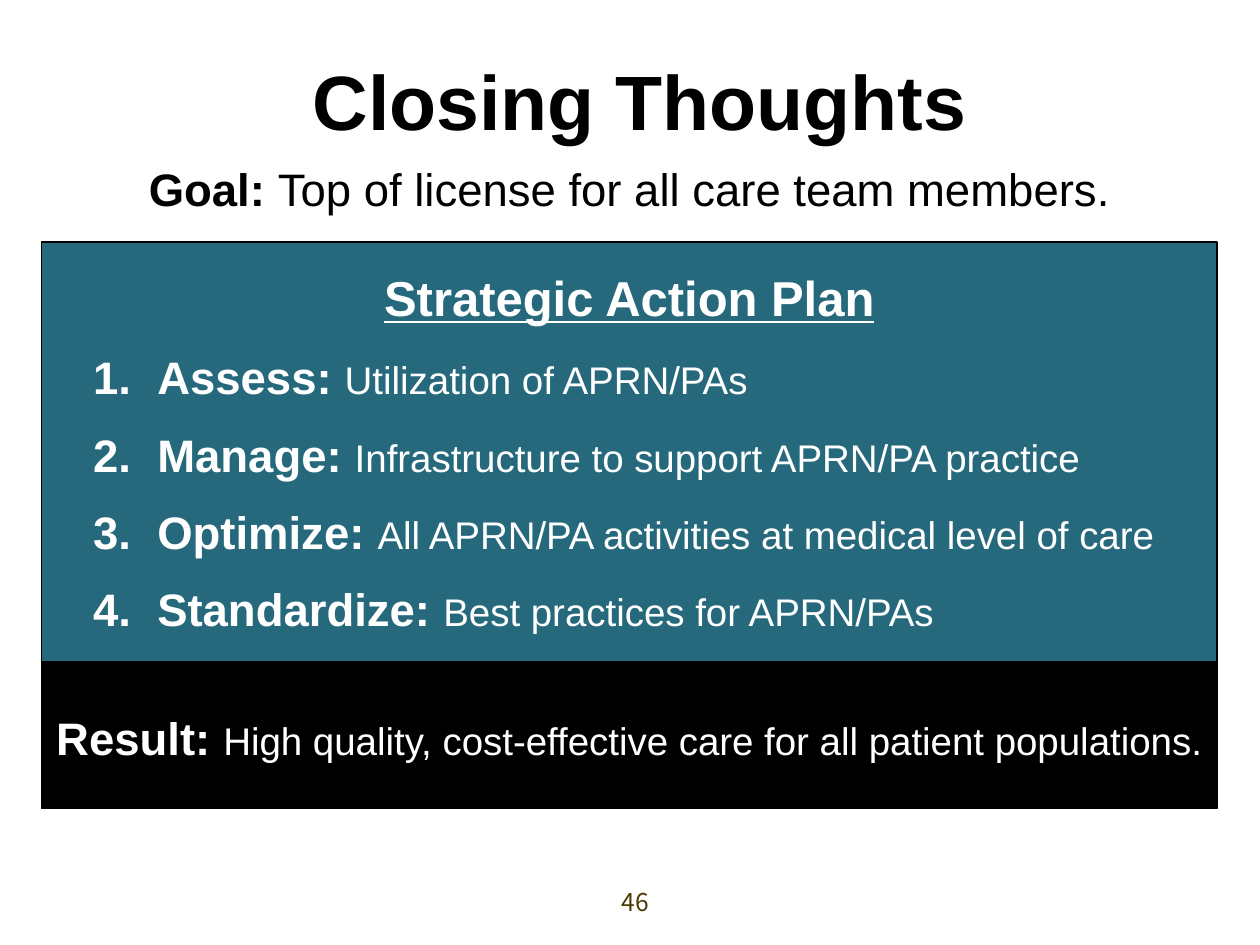
from dataclasses import dataclass

from lxml.etree import SubElement
from pptx import Presentation
from pptx.dml.color import RGBColor as Rgb
from pptx.enum.shapes import MSO_SHAPE as Shape
from pptx.enum.text import MSO_ANCHOR as Anchor, PP_ALIGN as Align
from pptx.oxml.ns import qn
from pptx.util import Inches, Pt


@dataclass(frozen=True)
class Theme:
    font: str = "Arial"
    number_font: str = "Noto Sans CJK JP"
    black: Rgb = Rgb(0, 0, 0)
    white: Rgb = Rgb(255, 255, 255)
    teal: Rgb = Rgb(0x26, 0x69, 0x7C)
    brown: Rgb = Rgb(0x4B, 0x39, 0x05)
    title: int = 44
    heading: int = 28
    label: int = 26
    detail: int = 22
    number: int = 14


class SlideBuilder:
    def __init__(self, slide, theme):
        self.slide = slide
        self.theme = theme

    def add_run(self, paragraph, text, size, color, bold=False, font=None):
        run = paragraph.add_run()
        run.text = text
        run.font.name = font or self.theme.font
        run.font.size = Pt(size)
        run.font.bold = bold
        run.font.color.rgb = color
        return run

    def add_pair(self, paragraph, label, detail, color, detail_size):
        self.add_run(paragraph, label + " ", self.theme.label, color, bold=True)
        self.add_run(paragraph, detail, detail_size, color)

    def title(self, text, left, top, width, height):
        title = self.slide.shapes.title
        title.left, title.top = Inches(left), Inches(top)
        title.width, title.height = Inches(width), Inches(height)
        title.text_frame.vertical_anchor = Anchor.MIDDLE
        paragraph = title.text_frame.paragraphs[0]
        paragraph.alignment = Align.CENTER
        self.add_run(paragraph, text, self.theme.title, self.theme.black, bold=True)

    def text_line(self, left, top, width, height):
        box = self.slide.shapes.add_textbox(
            Inches(left), Inches(top), Inches(width), Inches(height))
        box.text_frame.word_wrap = True
        paragraph = box.text_frame.paragraphs[0]
        paragraph.alignment = Align.CENTER
        return paragraph

    def panel(self, left, top, width, height, fill):
        panel = self.slide.shapes.add_shape(
            Shape.RECTANGLE, Inches(left), Inches(top), Inches(width), Inches(height))
        panel.shadow.inherit = False
        panel.fill.solid()
        panel.fill.fore_color.rgb = fill
        panel.line.color.rgb = self.theme.black
        panel.line.width = Pt(0.75)
        frame = panel.text_frame
        frame.word_wrap = True
        frame.vertical_anchor = Anchor.MIDDLE
        frame.paragraphs[0].alignment = Align.CENTER
        return frame

    def numbered_item(self, frame, label, detail):
        paragraph = frame.add_paragraph()
        paragraph.alignment = Align.LEFT
        paragraph.space_before = Pt(13)
        properties = paragraph._p.get_or_add_pPr()
        properties.set("marL", str(Inches(0.82)))
        properties.set("indent", str(Inches(-0.51)))
        SubElement(properties, qn("a:buFont"), typeface="+mj-lt")
        SubElement(properties, qn("a:buAutoNum"), type="arabicPeriod")
        self.add_pair(paragraph, label, detail, self.theme.white, self.theme.detail)


def main():
    theme = Theme()
    deck = Presentation()
    deck.slide_width, deck.slide_height = Inches(10), Inches(7.5)
    builder = SlideBuilder(deck.slides.add_slide(deck.slide_layouts[5]), theme)

    builder.title("Closing Thoughts", 0.58, 0.33, 9, 0.92)

    goal = builder.text_line(0, 1.23, 10, 0.54)
    builder.add_pair(goal, "Goal:", "Top of license for all care team members.",
                     theme.black, theme.label)

    result = builder.panel(0.33, 5.11, 9.33, 1.31, theme.black)
    result.margin_top = Inches(0.22)
    builder.add_pair(result.paragraphs[0], "Result:",
                     "High quality, cost-effective care for all patient populations.",
                     theme.white, theme.detail)

    plan = builder.panel(0.33, 1.92, 9.33, 3.33, theme.teal)
    heading = builder.add_run(plan.paragraphs[0], "Strategic Action Plan",
                              theme.heading, theme.white, bold=True)
    heading.font.underline = True
    steps = [
        ("Assess:", "Utilization of APRN/PAs"),
        ("Manage:", "Infrastructure to support APRN/PA practice"),
        ("Optimize:", "All APRN/PA activities at medical level of care"),
        ("Standardize:", "Best practices for APRN/PAs"),
    ]
    for label, detail in steps:
        builder.numbered_item(plan, label, detail)

    page_number = builder.text_line(4, 6.99, 2.08, 0.5)
    builder.add_run(page_number, "46", theme.number, theme.brown, font=theme.number_font)

    deck.save("out.pptx")


if __name__ == "__main__":
    main()
